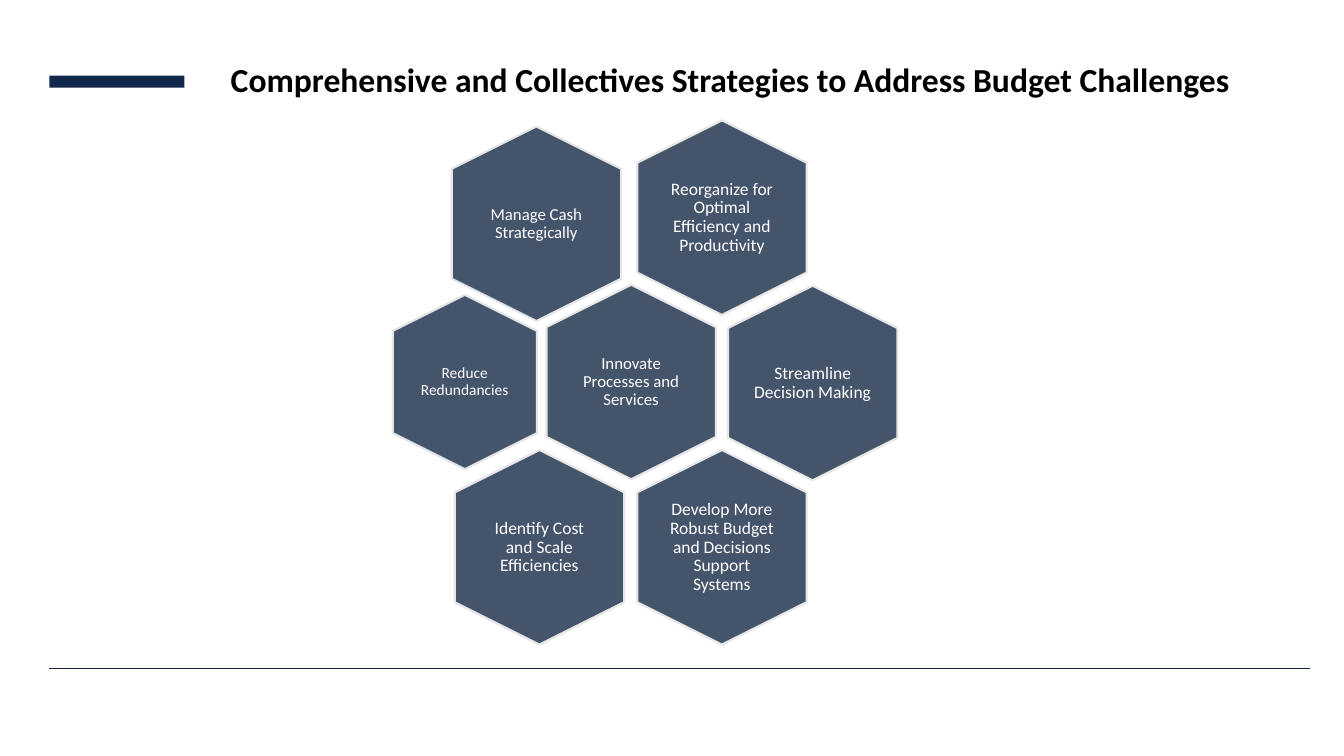
from dataclasses import dataclass

from lxml import etree
from pptx import Presentation
from pptx.dml.color import RGBColor
from pptx.enum.shapes import MSO_CONNECTOR, MSO_SHAPE
from pptx.enum.text import MSO_ANCHOR, PP_ALIGN
from pptx.oxml.ns import qn
from pptx.util import Inches, Pt

RECT, HEXAGON = MSO_SHAPE.RECTANGLE, MSO_SHAPE.HEXAGON
STRAIGHT = MSO_CONNECTOR.STRAIGHT
TOP, MIDDLE = MSO_ANCHOR.TOP, MSO_ANCHOR.MIDDLE
LEFT, CENTER = PP_ALIGN.LEFT, PP_ALIGN.CENTER


@dataclass(frozen=True)
class Theme:
    """Colours, font and type sizes of the slide."""
    navy: RGBColor = RGBColor(0x13, 0x29, 0x4B)
    slate: RGBColor = RGBColor(0x44, 0x54, 0x6A)
    edge: RGBColor = RGBColor(0xE7, 0xE6, 0xE6)
    white: RGBColor = RGBColor(255, 255, 255)
    black: RGBColor = RGBColor(0, 0, 0)
    font: str = "Calibri"
    title: float = 24
    label: float = 12.5
    medium: float = 12
    small: float = 11


THEME = Theme()
LARGE_HEX = (1.68, 1.93)
SMALL_HEX = (1.43, 1.73)
TEXT_SHARE = 0.69

CELLS = [
    ("Reorganize for Optimal Efficiency and Productivity",
     2.47, 0.84, LARGE_HEX, THEME.label, 0.05),
    ("Innovate Processes and Services", 1.57, 2.47, LARGE_HEX, THEME.medium, 0),
    ("Manage Cash Strategically", 0.63, 0.9, LARGE_HEX, THEME.medium, 0.05),
    ("Streamline Decision Making", 3.37, 2.48, LARGE_HEX, THEME.label, 0),
    ("Develop More Robust Budget and Decisions Support Systems",
     2.47, 4.11, LARGE_HEX, THEME.label, 0.05),
    ("Identify Cost and Scale Efficiencies", 0.66, 4.11, LARGE_HEX, THEME.label, 0),
    ("Reduce Redundancies", -0.08, 2.47, SMALL_HEX, THEME.small, 0),
]


def assign(target, values):
    """Set each named value on the target."""
    for name, value in values.items():
        setattr(target, name, value)


def add_text(slide, box, text, look, align=LEFT, anchor=TOP,
             pad=(0.1, 0.05), spacing=1.0):
    """Write one paragraph in a box given in inches."""
    frame = slide.shapes.add_textbox(*map(Inches, box)).text_frame
    side, edge = map(Inches, pad)
    assign(frame, {"word_wrap": True, "vertical_anchor": anchor,
                   "margin_left": side, "margin_right": side,
                   "margin_top": edge, "margin_bottom": edge})
    line = frame.paragraphs[0]
    assign(line, {"alignment": align, "line_spacing": spacing})
    run = line.add_run()
    run.text = text
    size, color, bold = look
    assign(run.font, {"name": THEME.font, "size": Pt(size), "bold": bold})
    run.font.color.rgb = color


def add_solid(slide, kind, box, color):
    """Draw a flat shape without an outline."""
    shape = slide.shapes.add_shape(kind, *map(Inches, box))
    shape.shadow.inherit = False
    shape.fill.solid()
    shape.fill.fore_color.rgb = color
    shape.line.fill.background()
    return shape


def add_header(slide, box):
    """Place the accent bar and the title."""
    left, top, width, height = box
    add_solid(slide, RECT, (left, top + 0.21, 1.34, 0.12), THEME.navy)
    add_text(slide, (left + 1.7, top, width - 1.7, height),
             "Comprehensive and Collectives Strategies to Address Budget Challenges",
             (THEME.title, THEME.black, True))


def add_cell(slide, center, size, text, points, pad):
    """Place an upright hexagon and its label around a center."""
    x, y = center
    wide, tall = size
    shape = add_solid(slide, HEXAGON,
                      (x - tall / 2, y - wide / 2, tall, wide), THEME.slate)
    shape.rotation = 90
    shape.adjustments[0] = 0.25
    shape.adjustments[1] = 1.1547
    shape.line.color.rgb = THEME.edge
    shape.line.width = Pt(1.5)
    w, h = wide * TEXT_SHARE, tall * TEXT_SHARE
    add_text(slide, (x - w / 2, y - h / 2, w, h), text,
             (points, THEME.white, False), CENTER, MIDDLE, (pad, pad), 0.9)


def add_comb(slide, box):
    """Place all strategy cells relative to the box."""
    left, top = box[:2]
    for text, x, y, size, points, pad in CELLS:
        add_cell(slide, (left + x + 0.8, top + y + 0.12), size, text, points, pad)


def add_footer(slide, box):
    """Draw the rule along the top of the box."""
    left, top, width = box[:3]
    rule = slide.shapes.add_connector(
        STRAIGHT, *map(Inches, (left, top, left + width, top)))
    rule.line.color.rgb = THEME.navy
    rule.line.width = Pt(0.5)
    etree.SubElement(rule.element.spPr, qn("a:effectLst"))


def main():
    """Build and save the slide."""
    deck = Presentation()
    assign(deck, {"slide_width": Inches(13.33), "slide_height": Inches(7.5)})
    slide = deck.slides.add_slide(deck.slide_layouts[6])
    add_footer(slide, (0.49, 6.63, 12.5, 0.5))
    add_comb(slide, (3.89, 1.2, 5.02, 5.2))
    add_header(slide, (0.49, 0.54, 12.02, 0.5))
    deck.save("out.pptx")


if __name__ == "__main__":
    main()
